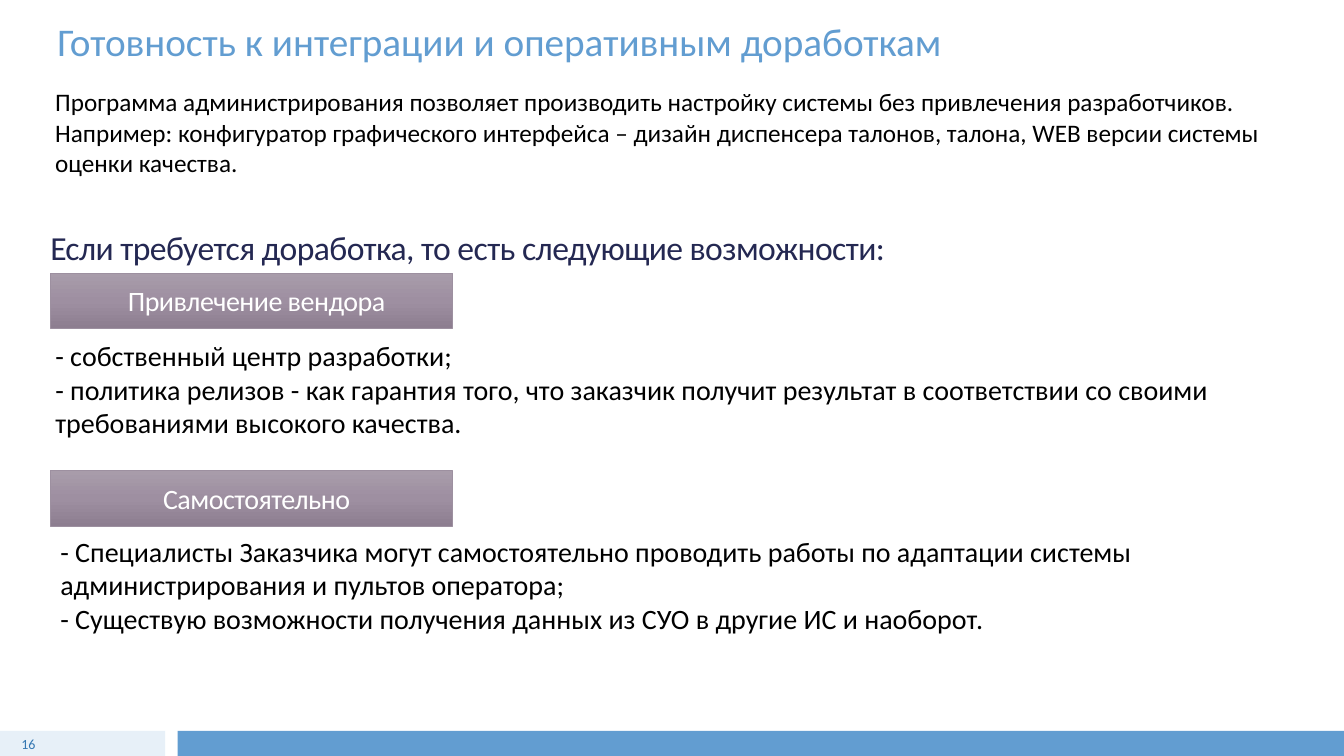
import copy

import pptx
import pptx.dml.color
import pptx.enum.shapes
import pptx.enum.text
import pptx.util

Pt = pptx.util.Pt
ALIGN = pptx.enum.text.PP_ALIGN
ANCHOR = pptx.enum.text.MSO_ANCHOR
FIT = pptx.enum.text.MSO_AUTO_SIZE

COLORS = {
    "accent": "629DD1", "pale": "E7F0F8", "number": "3477B2",
    "text": "000000", "heading": "242852", "white": "FFFFFF",
    "bar_line": "9D90A0", "bar_top": "A89CAA", "bar_middle": "9E8FA1", "bar_bottom": "8D7E90",
}
NO_MARGINS = {"margin_left": 0, "margin_top": 0, "margin_right": 0, "margin_bottom": 0}
GROW = {"auto_size": FIT.SHAPE_TO_FIT_TEXT}


def rgb(name):
    """Return the named colour."""
    return pptx.dml.color.RGBColor.from_string(COLORS[name])


def apply(target, values):
    """Set each attribute of the target from a dict."""
    for name, value in values.items():
        setattr(target, name, value)


def write(shape, lines, size, color, frame_format=None, para_format=None, tracking=0):
    """Fill a shape with formatted paragraphs."""
    frame = shape.text_frame
    apply(frame, {"word_wrap": True, **(frame_format or {})})
    for index, line in enumerate(lines):
        para = frame.add_paragraph() if index else frame.paragraphs[0]
        apply(para, {"alignment": ALIGN.LEFT, **(para_format or {})})
        span = para.add_run()
        span.text = line
        apply(span.font, {"name": "Calibri", "size": Pt(size)})
        span.font.color.rgb = rgb(color)
        if tracking:
            span.font._element.set("spc", str(round(tracking * 100)))


def add_text(page, box, lines, size, color, **formats):
    """Add a text box with its paragraphs."""
    shape = page.shapes.add_textbox(*map(Pt, box))
    write(shape, lines, size, color, **formats)


def add_rect(page, box):
    """Add a rectangle without a shadow."""
    rect = page.shapes.add_shape(pptx.enum.shapes.MSO_SHAPE.RECTANGLE, *map(Pt, box))
    rect.shadow.inherit = False
    return rect


def add_title(page, box, title):
    """Place and format the title placeholder."""
    shape = page.shapes.title
    apply(shape, dict(zip(("left", "top", "width", "height"), map(Pt, box))))
    write(shape, [title], 28, "accent",
          frame_format={"vertical_anchor": ANCHOR.BOTTOM, "auto_size": FIT.NONE})


def add_bar(page, box, label):
    """Add a shaded bar with a centred label."""
    bar = add_rect(page, box)
    bar.fill.gradient()
    bar.fill.gradient_angle = 270
    first = bar.fill.gradient_stops[0]._gs
    first.addnext(copy.deepcopy(first))
    shades = (("bar_top", 0), ("bar_middle", 0.5), ("bar_bottom", 1))
    for stop, (color, position) in zip(bar.fill.gradient_stops, shades):
        stop.color.rgb = rgb(color)
        stop.position = position
    bar.line.color.rgb = rgb("bar_line")
    bar.line.width = Pt(0.5)
    write(bar, [label], 20, "white", tracking=-0.4,
          frame_format={**NO_MARGINS, "margin_left": Pt(7.2), "vertical_anchor": ANCHOR.MIDDLE},
          para_format={"alignment": ALIGN.CENTER, "space_before": Pt(4), "space_after": Pt(6)})


def add_option(page, box, label, lines, indent, drop):
    """Add a labelled bar with its points below."""
    left, top, width, height = box
    add_bar(page, (left, top, 287.3, 39.6), label)
    add_text(page, (left + indent, top + drop, width, height - drop), lines, 20, "text",
             frame_format=GROW)


def add_footer(page, box, number):
    """Add the two footer strips and the page number."""
    left, top, width, height = box
    gap_start, gap_end = 118, 126.8
    strips = ((left, gap_start, "pale"), (left + gap_end, width - gap_end, "accent"))
    for strip_left, strip_width, color in strips:
        strip = add_rect(page, (strip_left, top, strip_width, height))
        strip.fill.solid()
        strip.fill.fore_color.rgb = rgb(color)
        strip.line.fill.background()
    add_text(page, (left, top, 32.4, height), [number], 10, "number",
             frame_format={"vertical_anchor": ANCHOR.MIDDLE},
             para_format={"alignment": ALIGN.RIGHT})


def main():
    """Build the slide and save the deck."""
    deck = pptx.Presentation()
    apply(deck, {"slide_width": Pt(960), "slide_height": Pt(540)})
    page = deck.slides.add_slide(deck.slide_layouts[5])
    add_footer(page, (0, 522, 960, 18), "16")
    add_title(page, (33.8, 9.4, 926, 40.3), "Готовность к интеграции и оперативным доработкам")
    add_text(page, (32.4, 58.3, 892, 72.7), [
        "Программа администрирования позволяет производить настройку системы без привлечения разработчиков.",
        "Например: конфигуратор графического интерфейса – дизайн диспенсера талонов, талона, "
        "WEB версии системы оценки качества.",
    ], 18, "text", frame_format=GROW)
    add_text(page, (36, 162, 869, 28.8),
             ["Если требуется доработка, то есть следующие возможности:"], 24, "heading",
             frame_format=NO_MARGINS, tracking=-0.4)
    add_option(page, (36, 195, 893.5, 123), "Привлечение вендора", [
        "- собственный центр разработки;",
        "- политика релизов - как гарантия того, что заказчик получит результат в соответствии "
        "со своими требованиями высокого качества.",
    ], indent=-3.6, drop=43.2)
    add_option(page, (36, 336.2, 877, 121.8), "Самостоятельно", [
        "- Специалисты Заказчика могут самостоятельно проводить работы по адаптации системы "
        "администрирования и пультов оператора;",
        "- Существую возможности получения данных из СУО в другие ИС и наоборот.",
    ], indent=0, drop=41.8)
    deck.save("out.pptx")


if __name__ == "__main__":
    main()
